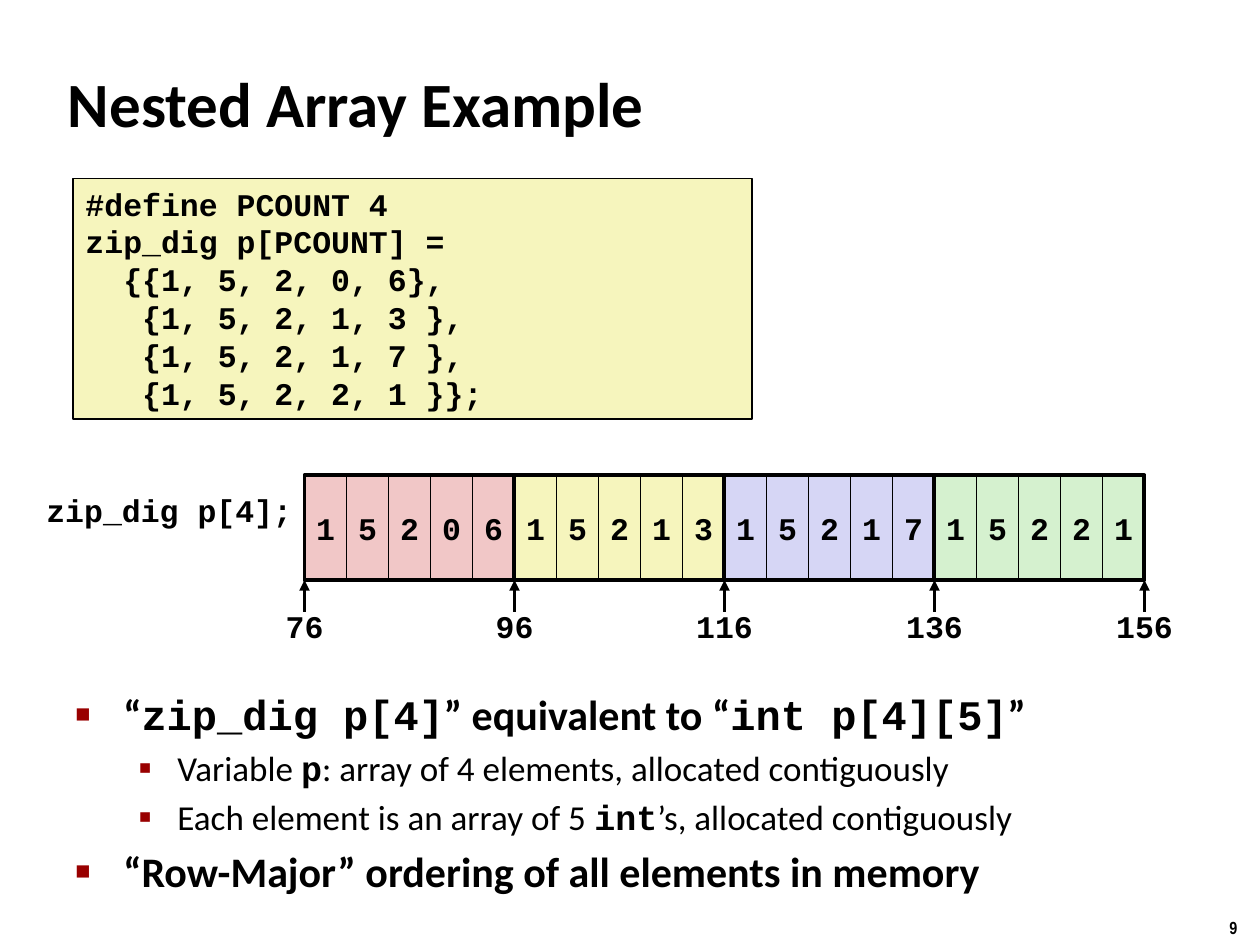
from lxml import etree
from pptx import Presentation
from pptx import util as u
from pptx.dml.color import RGBColor
from pptx.enum import shapes, text
from pptx.oxml import ns

COLORS = {
    "ink": "000000",
    "bullet": "990000",
    "red": "F1C7C7",
    "yellow": "F6F5BD",
    "blue": "D6D6F5",
    "green": "D5F1CF",
}
CODE, PROSE = "Courier New", "Calibri"
LEFT, CENTER, RIGHT = text.PP_ALIGN.LEFT, text.PP_ALIGN.CENTER, text.PP_ALIGN.RIGHT

deck = Presentation()
deck.slide_width, deck.slide_height = u.Inches(10), u.Inches(7.5)
slide = deck.slides.add_slide(deck.slide_layouts[6])
col, row = deck.slide_width / 30, deck.slide_height / 90


def grid(left, top, width, height):
    return [round(n) for n in (left * col, top * row, width * col, height * row)]


def write(shape, lines, size, font=CODE, align=LEFT, wrap=True, anchor=text.MSO_ANCHOR.TOP):
    frame = shape.text_frame
    frame.word_wrap, frame.vertical_anchor = wrap, anchor
    frame.text = lines
    for paragraph in frame.paragraphs:
        paragraph.alignment = align
        paragraph.font.size, paragraph.font.name = u.Pt(size), font
        paragraph.font.bold = True
        paragraph.font.color.rgb = RGBColor.from_string(COLORS["ink"])


page = slide.shapes.add_textbox(*grid(28.98, 86.76, 1.02, 3.24))
write(page, "9", 10, "Arial Narrow", wrap=False)

title = slide.shapes.add_textbox(*grid(1.32, 6, 20.9, 7.5))
write(title, "Nested Array Example", 36, PROSE, anchor=text.MSO_ANCHOR.MIDDLE)

points = [
    (0, [("“", PROSE), ("zip_dig p[4]", CODE), ("” equivalent to “", PROSE),
         ("int p[4][5]", CODE), ("”", PROSE)]),
    (1, [("Variable ", PROSE), ("p", CODE),
         (": array of 4 elements, allocated contiguously", PROSE)]),
    (1, [("Each element is an array of 5 ", PROSE), ("int", CODE),
         ("’s, allocated contiguously", PROSE)]),
    (0, [("“Row-Major” ordering of all elements in memory", PROSE)]),
]
levels = [
    {"size": 24, "margin": 0.38, "hang": 0.38, "mark": "■", "scale": 60},
    {"size": 20, "margin": 0.81, "hang": 0.31, "mark": "▪", "scale": 110},
]
body = slide.shapes.add_textbox(*grid(1.5, 65, 26.25, 25)).text_frame
body.word_wrap = True
for number, (depth, pieces) in enumerate(points):
    level = levels[depth]
    point = body.add_paragraph() if number else body.paragraphs[0]
    point.level = depth
    point.space_before = u.Pt(level["size"] * 0.2)
    point.font.size = u.Pt(level["size"])
    point.font.color.rgb = RGBColor.from_string(COLORS["ink"])
    for words, font in pieces:
        run = point.add_run()
        run.text = words
        run.font.name = font
        run.font.bold = depth == 0 or font == CODE
    props = point._p.get_or_add_pPr()
    props.set("marL", str(u.Inches(level["margin"])))
    props.set("indent", str(-u.Inches(level["hang"])))
    bullet = [
        etree.Element(ns.qn("a:buClr")),
        etree.Element(ns.qn("a:buSzPct"), val=str(level["scale"] * 1000)),
        etree.Element(ns.qn("a:buFont"), typeface="Arial"),
        etree.Element(ns.qn("a:buChar"), char=level["mark"]),
    ]
    etree.SubElement(bullet[0], ns.qn("a:srgbClr"), val=COLORS["bullet"])
    spacing = props.find(ns.qn("a:spcBef"))
    for part in reversed(bullet):
        spacing.addnext(part)

source = slide.shapes.add_shape(shapes.MSO_SHAPE.RECTANGLE, *grid(1.74, 17, 16.17, 22.9))
source.shadow.inherit = False
source.fill.solid()
source.fill.fore_color.rgb = RGBColor.from_string(COLORS["yellow"])
source.line.color.rgb = RGBColor.from_string(COLORS["ink"])
source.line.width = u.Pt(1)
write(source, """#define PCOUNT 4
zip_dig p[PCOUNT] =
  {{1, 5, 2, 0, 6},
   {1, 5, 2, 1, 3 },
   {1, 5, 2, 1, 7 },
   {1, 5, 2, 2, 1 }};""", 18)

array_left, array_top, array_height, digits = 7.25, 45.25, 10, 5
array_bottom = array_top + array_height

declaration = slide.shapes.add_textbox(*grid(0, 46.2, array_left, 4.8))
write(declaration, "zip_dig p[4];", 18, align=RIGHT)

for index, address in enumerate(range(76, 157, 20)):
    x = array_left + index * digits
    arrow_x, arrow_top, _, arrow_length = grid(x, array_bottom, 0, 3)
    arrow = slide.shapes.add_connector(
        shapes.MSO_CONNECTOR.STRAIGHT, arrow_x, arrow_top + arrow_length, arrow_x, arrow_top)
    arrow.line.color.rgb = RGBColor.from_string(COLORS["ink"])
    arrow.line.width = u.Pt(2)
    etree.SubElement(arrow.line._get_or_add_ln(), ns.qn("a:tailEnd"), type="triangle")
    etree.SubElement(arrow._element.spPr, ns.qn("a:effectLst"))
    label = slide.shapes.add_textbox(*grid(x - 1, array_bottom + 2, 2, 4.8))
    write(label, str(address), 18, align=CENTER, wrap=False)

zip_codes = [("15206", "red"), ("15213", "yellow"), ("15217", "blue"), ("15221", "green")]
for index, (zip_code, tint) in enumerate(zip_codes):
    group = slide.shapes.add_group_shape()
    for offset, digit in enumerate(zip_code):
        x = array_left + index * digits + offset
        cell = group.shapes.add_shape(
            shapes.MSO_SHAPE.RECTANGLE, *grid(x, array_top, 1, array_height))
        cell.shadow.inherit = False
        cell.fill.solid()
        cell.fill.fore_color.rgb = RGBColor.from_string(COLORS[tint])
        cell.line.color.rgb = RGBColor.from_string(COLORS["ink"])
        cell.line.width = u.Pt(1)
        write(cell, digit, 18, align=CENTER, wrap=False, anchor=text.MSO_ANCHOR.MIDDLE)

for index in range(len(zip_codes)):
    border = slide.shapes.add_shape(
        shapes.MSO_SHAPE.RECTANGLE,
        *grid(array_left + index * digits, array_top, digits, array_height))
    border.shadow.inherit = False
    border.fill.background()
    border.line.color.rgb = RGBColor.from_string(COLORS["ink"])
    border.line.width = u.Pt(2.25)

deck.save("out.pptx")
